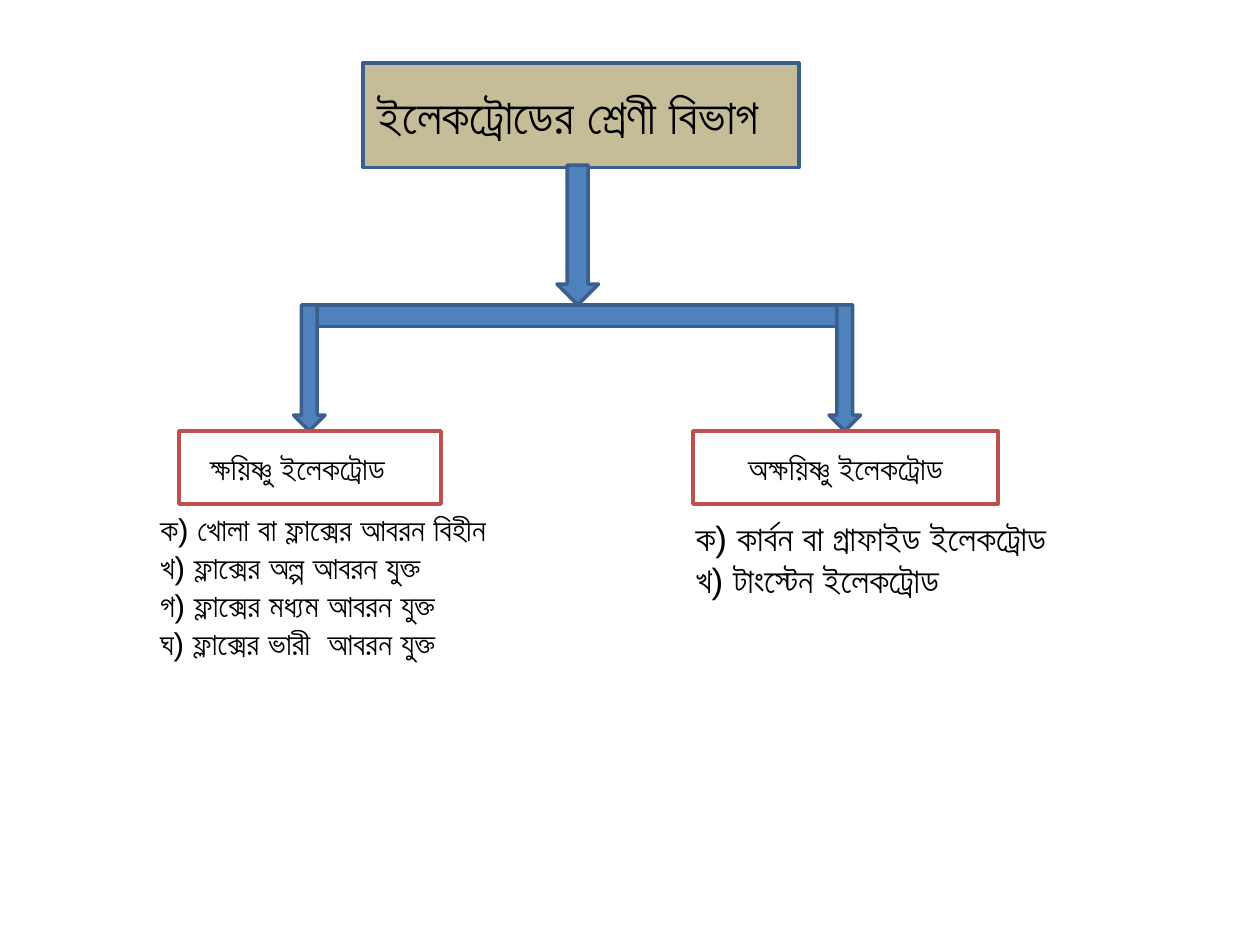
from lxml import etree
from pptx import Presentation
from pptx.dml.color import RGBColor
from pptx.enum.shapes import MSO_SHAPE
from pptx.enum.text import MSO_ANCHOR, MSO_AUTO_SIZE, PP_ALIGN
from pptx.oxml.ns import qn
from pptx.util import Inches, Pt

RECTANGLE, DOWN_ARROW = MSO_SHAPE.RECTANGLE, MSO_SHAPE.DOWN_ARROW
TOP, MIDDLE = MSO_ANCHOR.TOP, MSO_ANCHOR.MIDDLE
LEFT, CENTER = PP_ALIGN.LEFT, PP_ALIGN.CENTER
FIXED, GROW = MSO_AUTO_SIZE.NONE, MSO_AUTO_SIZE.SHAPE_TO_FIT_TEXT

BLACK = RGBColor(0x00, 0x00, 0x00)
WHITE = RGBColor(0xFF, 0xFF, 0xFF)
TAN = RGBColor(0xC4, 0xBD, 0x97)
BLUE = RGBColor(0x4F, 0x81, 0xBD)
DARK_BLUE = RGBColor(0x3A, 0x5F, 0x8C)
RED = RGBColor(0xC0, 0x50, 0x4D)

TWO_CONTENT_LAYOUT = 3
BRANCH_TOP = 2.42
LABEL_TOP = 3.42
ARROW_WIDTH = 0.25


class TreeSlide:
    font = "Arial"
    line_width = Pt(2)

    def __init__(self, slide):
        self.slide = slide

    def place(self, shape, box):
        shape.left, shape.top, shape.width, shape.height = map(Inches, box)

    def paint(self, shape, fill, line):
        shape.fill.solid()
        shape.fill.fore_color.rgb = fill
        shape.line.color.rgb = line
        shape.line.width = self.line_width

    def add_text(self, paragraph, text, size, align):
        paragraph.alignment = align
        run = paragraph.add_run()
        run.text = text
        run.font.name = self.font
        run.font.size = Pt(size)
        run.font.color.rgb = BLACK
        # Bengali takes its typeface from the complex-script slot.
        properties = run._r.get_or_add_rPr()
        etree.SubElement(properties, qn("a:cs"), typeface=self.font)

    def caption(self, shape, text, size, shift):
        """Set one centred line, moved left by shift inches."""
        frame = shape.text_frame
        frame.word_wrap = True
        frame.auto_size = FIXED
        frame.vertical_anchor = MIDDLE
        frame.margin_left = Inches(0.1 - shift)
        frame.margin_right = Inches(0.1 + shift)
        self.add_text(frame.paragraphs[0], text, size, CENTER)

    def title(self, text, box):
        heading = self.slide.shapes.title
        self.place(heading, box)
        self.paint(heading, TAN, DARK_BLUE)
        self.caption(heading, text, 28, 0.1)

    def block(self, kind, box, fill=BLUE, line=DARK_BLUE):
        shape = self.slide.shapes.add_shape(kind, *map(Inches, box))
        shape.shadow.inherit = False
        self.paint(shape, fill, line)
        return shape

    def label(self, text, box, shift):
        self.caption(self.block(RECTANGLE, box, WHITE, RED), text, 18, shift)

    def items(self, index, lines, box, size):
        """Fill a body placeholder with plain lines lettered in their text."""
        body = self.slide.placeholders[index]
        self.place(body, box)
        frame = body.text_frame
        frame.word_wrap = True
        frame.auto_size = GROW
        frame.vertical_anchor = TOP
        for number, text in enumerate(lines):
            paragraph = frame.add_paragraph() if number else frame.paragraphs[0]
            paragraph.space_before = Pt(0)
            self.add_text(paragraph, text, size, LEFT)
            properties = paragraph._p.get_or_add_pPr()
            properties.set("marL", "0")
            properties.set("indent", "0")
            etree.SubElement(properties, qn("a:buNone"))


def main():
    deck = Presentation()
    deck.slide_width, deck.slide_height = Inches(10), Inches(7.5)
    layout = deck.slide_layouts[TWO_CONTENT_LAYOUT]
    tree = TreeSlide(deck.slides.add_slide(layout))

    tree.title("ইলেকট্রোডের শ্রেণী বিভাগ", (2.88, 0.5, 3.46, 0.83))
    tree.block(DOWN_ARROW, (4.42, 1.31, 0.33, 1.11))
    tree.block(RECTANGLE, (2.42, BRANCH_TOP, 4.33, 0.17))
    for arrow_left in (6.58, 2.33):
        tree.block(DOWN_ARROW, (arrow_left, BRANCH_TOP, ARROW_WIDTH,
                                LABEL_TOP - BRANCH_TOP))

    tree.label("ক্ষয়িষ্ণু ইলেকট্রোড", (1.42, LABEL_TOP, 2.08, 0.58), 0.1)
    tree.label("অক্ষয়িষ্ণু ইলেকট্রোড", (5.5, LABEL_TOP, 2.42, 0.58), 0)

    consumable = (
        "ক) খোলা বা ফ্লাক্সের আবরন বিহীন",
        "খ) ফ্লাক্সের অল্প আবরন যুক্ত",
        "গ) ফ্লাক্সের মধ্যম আবরন যুক্ত",
        "ঘ) ফ্লাক্সের ভারী  আবরন যুক্ত",
    )
    non_consumable = (
        "ক) কার্বন বা গ্রাফাইড ইলেকট্রোড",
        "খ) টাংস্টেন ইলেকট্রোড",
    )
    tree.items(1, consumable, (1.17, 4, 3.33, 1.62), 18)
    tree.items(2, non_consumable, (5.42, 4.05, 3.33, 0.77), 20)
    deck.save("out.pptx")


if __name__ == "__main__":
    main()
